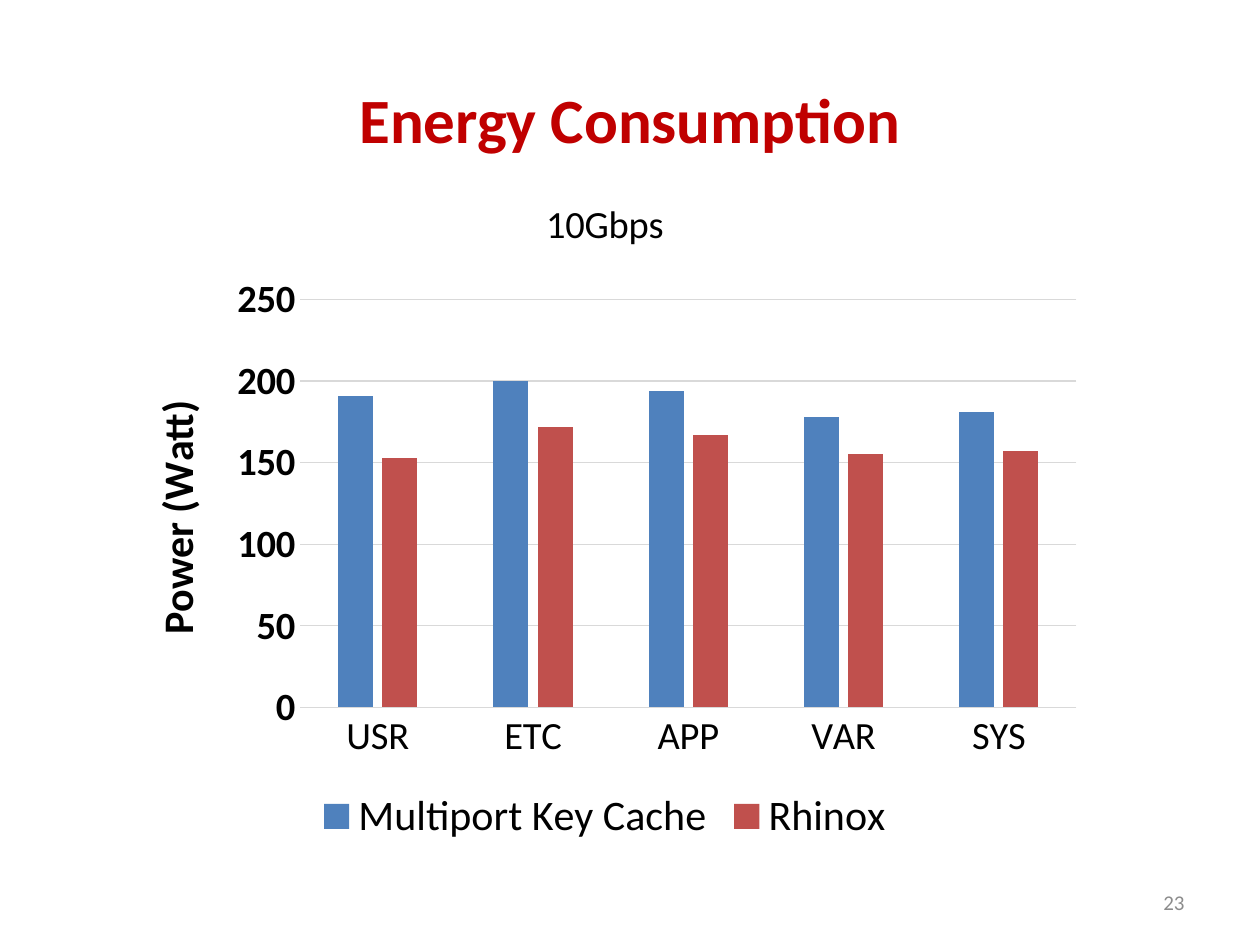
from pptx import Presentation
from pptx.chart.data import CategoryChartData
from pptx.dml.color import RGBColor
from pptx.enum.chart import XL_CHART_TYPE as ChartType, XL_LEGEND_POSITION as LegendPosition, XL_TICK_MARK as TickMark
from pptx.enum.text import MSO_ANCHOR as Anchor, PP_ALIGN as Align
from pptx.oxml import parse_xml
from pptx.oxml.ns import nsdecls
from pptx.util import Inches, Pt

FONT = "Calibri"
BLACK = RGBColor(0x00, 0x00, 0x00)
DARK_RED = RGBColor(0xC0, 0x00, 0x00)
GRAY = RGBColor(0x8C, 0x8C, 0x8C)
GRID_GRAY = RGBColor(0xD9, 0xD9, 0xD9)
BLUE = RGBColor(0x4F, 0x81, 0xBD)
RED = RGBColor(0xC0, 0x50, 0x4D)

WIDTH, HEIGHT = 10, 7.5
WORKLOADS = ["USR", "ETC", "APP", "VAR", "SYS"]
POWER = [
    ("Multiport Key Cache", [191, 200, 194, 178, 181], BLUE),
    ("Rhinox", [153, 172, 167, 155, 157], RED),
]
PLOT_SHARES = {"x": 0.19, "y": 0.19, "w": 0.79, "h": 0.6}


def frame(left, top, width, height):
    """Turn shares of the slide's size into lengths."""
    return (Inches(left * WIDTH), Inches(top * HEIGHT),
            Inches(width * WIDTH), Inches(height * HEIGHT))


def style_font(font, size, color=BLACK, bold=False):
    """Set typeface, size, colour and weight."""
    font.name, font.size, font.bold = FONT, Pt(size), bold
    font.color.rgb = color


def style_line(line, color):
    """Draw a thin line in one colour."""
    line.color.rgb = color
    line.width = Pt(0.75)


def add_text(slide, text, shares, align, size, color, bold=False):
    """Add a one-line text box, centred vertically."""
    text_frame = slide.shapes.add_textbox(*frame(*shares)).text_frame
    text_frame.word_wrap = True
    text_frame.vertical_anchor = Anchor.MIDDLE
    paragraph = text_frame.paragraphs[0]
    paragraph.text, paragraph.alignment = text, align
    style_font(paragraph.font, size, color, bold)


def set_title(owner, text, size, bold=False):
    """Give a chart or an axis its title."""
    paragraph = owner.text_frame.paragraphs[0]
    paragraph.text = text
    style_font(paragraph.font, size, BLACK, bold)


def place_plot(chart, shares):
    """Fix the inner plot area at shares of the chart's size."""
    modes = "".join(f'<c:{side}Mode val="edge"/>' for side in "xy")
    sizes = "".join(f'<c:{side} val="{share}"/>' for side, share in shares.items())
    plot_area = chart.plots[0]._element.getparent()
    for layout in plot_area.findall("{*}layout"):
        plot_area.remove(layout)
    plot_area.insert(0, parse_xml(
        f'<c:layout {nsdecls("c")}><c:manualLayout><c:layoutTarget val="inner"/>'
        f'{modes}{sizes}</c:manualLayout></c:layout>'))


def style_axes(chart):
    """Format the workload axis and the power axis."""
    for axis, bold in ((chart.category_axis, False), (chart.value_axis, True)):
        axis.major_tick_mark = axis.minor_tick_mark = TickMark.NONE
        style_font(axis.tick_labels.font, 22, BLACK, bold)
    style_line(chart.category_axis.format.line, GRID_GRAY)
    power_axis = chart.value_axis
    power_axis.minimum_scale, power_axis.maximum_scale = 0, 250
    power_axis.major_unit = 50
    power_axis.format.line.fill.background()
    style_line(power_axis.major_gridlines.format.line, GRID_GRAY)
    set_title(power_axis.axis_title, "Power (Watt)", 24, bold=True)


def add_power_chart(slide, shares):
    """Add the clustered columns of power by workload."""
    data = CategoryChartData()
    data.categories = WORKLOADS
    for name, values, _ in POWER:
        data.add_series(name, values)
    chart = slide.shapes.add_chart(ChartType.COLUMN_CLUSTERED, *frame(*shares), data).chart
    style_font(chart.font, 10)
    set_title(chart.chart_title, "10Gbps", 22)
    chart.chart_title.include_in_layout = False
    chart.has_legend = True
    chart.legend.position = LegendPosition.BOTTOM
    chart.legend.include_in_layout = False
    style_font(chart.legend.font, 24)
    plot = chart.plots[0]
    plot.gap_width, plot.overlap, plot.vary_by_categories = 219, -27, False
    for series, (_, _, color) in zip(plot.series, POWER):
        series.format.fill.solid()
        series.format.fill.fore_color.rgb = color
    style_axes(chart)
    place_plot(chart, PLOT_SHARES)


def main():
    """Build the slide and save it."""
    presentation = Presentation()
    presentation.slide_width, presentation.slide_height = Inches(WIDTH), Inches(HEIGHT)
    slide = presentation.slides.add_slide(presentation.slide_layouts[6])
    add_text(slide, "Energy Consumption", (0.05, 0.04, 0.9, 0.17), Align.CENTER, 36, DARK_RED, bold=True)
    add_text(slide, "23", (0.72, 0.93, 0.23, 0.05), Align.RIGHT, 12, GRAY)
    add_power_chart(slide, (0.09, 0.18, 0.78, 0.72))
    presentation.save("out.pptx")


if __name__ == "__main__":
    main()
